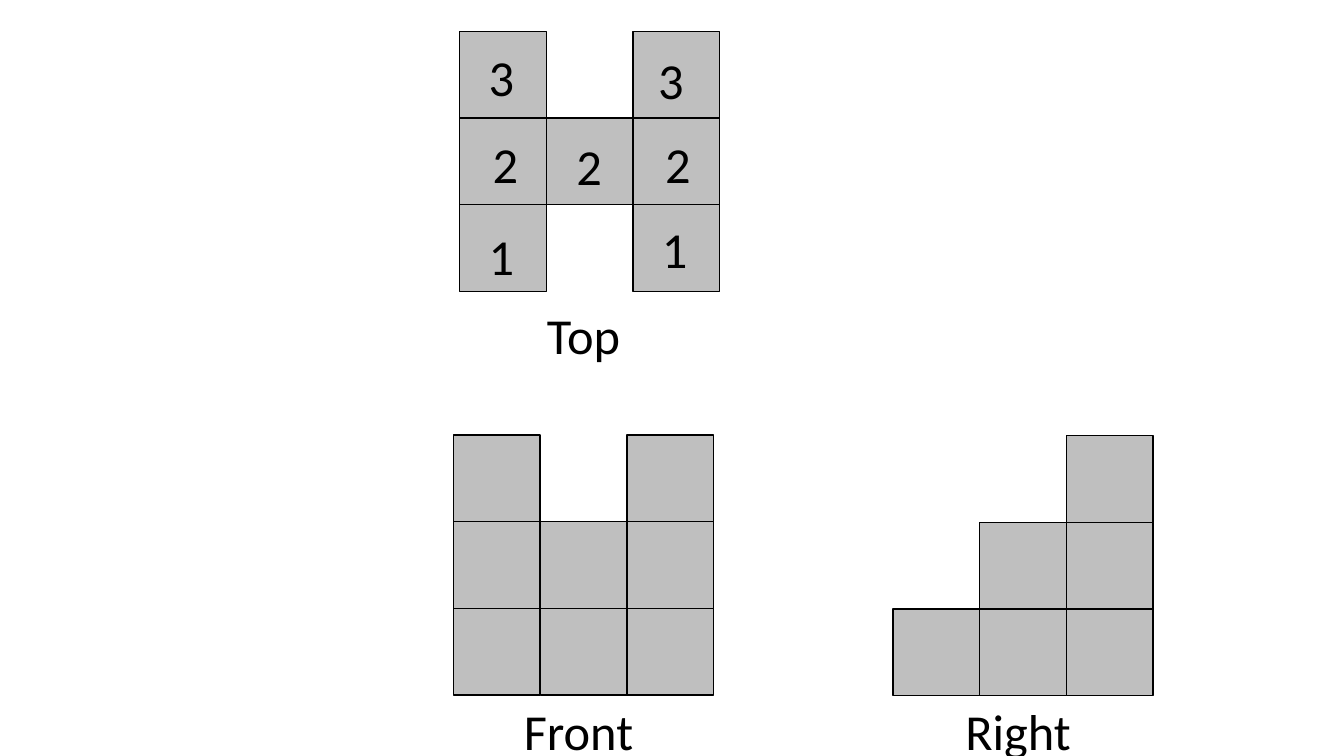
from pptx import Presentation
from pptx.dml.color import RGBColor
from pptx.enum import shapes, text
from pptx.util import Pt

SIDE = 61.9


def paint(hue):
    return RGBColor.from_string(hue)


def write(words, x, y, w):
    box = slide.shapes.add_textbox(Pt(x), Pt(y), Pt(w), Pt(51))
    frame = box.text_frame
    frame.word_wrap = True
    frame.auto_size = text.MSO_AUTO_SIZE.SHAPE_TO_FIT_TEXT
    frame.text = words
    para = frame.paragraphs[0]
    para.alignment = text.PP_ALIGN.CENTER
    font = para.runs[0].font
    font.name = "Calibri"
    font.size = Pt(36)
    font.color.rgb = paint("000000")


deck = Presentation()
deck.slide_width = Pt(960)
deck.slide_height = Pt(540)
slide = deck.slides.add_slide(deck.slide_layouts[6])

# Three views: left, top, rows of cells, caption with its place
views = [
    (328.3, 22.5, ["#.#", "###", "#.#"], "Top", 354.2, 213.8),
    (324, 310.8, ["#.#", "###", "###"], "Front", 350.6, 496.8),
    (637.9, 311.3, ["..#", ".##", "###"], "Right", 664.6, 496.8),
]
for left, top, rows, name, x, y in views:
    for i, row in enumerate(rows):
        for j, mark in enumerate(row):
            if mark != "#":
                continue
            cell = slide.shapes.add_shape(
                shapes.MSO_SHAPE.RECTANGLE,
                Pt(left + j * SIDE), Pt(top + i * SIDE), Pt(SIDE), Pt(SIDE))
            cell.shadow.inherit = False
            cell.fill.solid()
            cell.fill.fore_color.rgb = paint("BFBFBF")
            cell.line.color.rgb = paint("000000")
            cell.line.width = Pt(1)
    write(name, x, y, 125.3)

# Stack heights on the top view
heights = [
    ("3", 339.8, 29.5, 36.7), ("3", 460.8, 31.7, 36.7),
    ("2", 342.7, 91.4, 36.7), ("2", 402.5, 92.9, 36.7),
    ("2", 465.8, 91.4, 36.7),
    ("1", 339.8, 157, 36.7), ("1", 465.8, 151.9, 31),
]
for digit, x, y, w in heights:
    write(digit, x, y, w)

deck.save("out.pptx")
